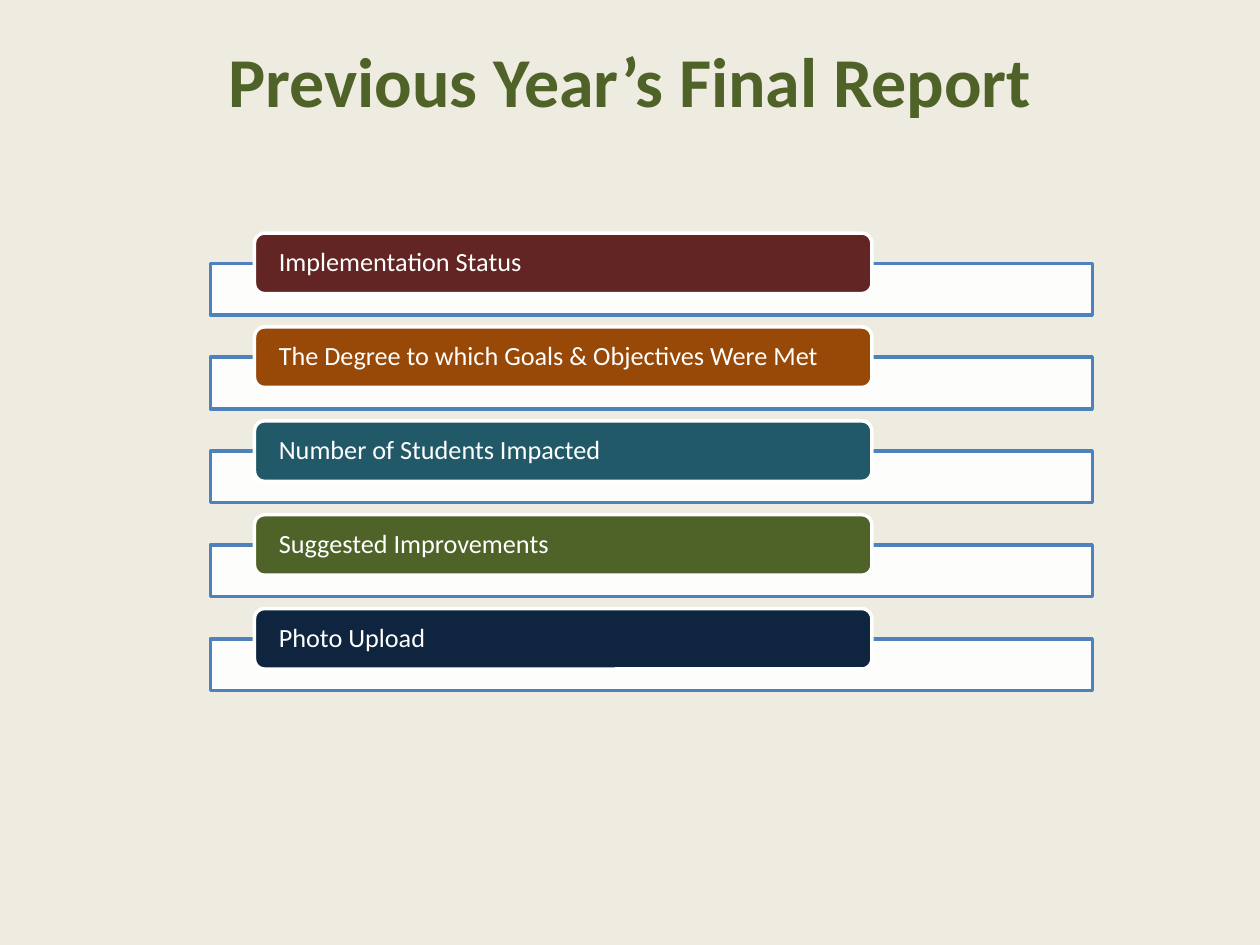
from lxml import etree
from pptx import Presentation
from pptx.dml.color import RGBColor
from pptx.enum.shapes import MSO_SHAPE
from pptx.enum.text import MSO_ANCHOR, PP_ALIGN
from pptx.oxml.ns import qn
from pptx.util import Inches, Pt

RECT, ROUND_RECT = MSO_SHAPE.RECTANGLE, MSO_SHAPE.ROUNDED_RECTANGLE
MIDDLE = MSO_ANCHOR.MIDDLE
LEFT, CENTER = PP_ALIGN.LEFT, PP_ALIGN.CENTER

CREAM = RGBColor(0xEE, 0xEC, 0xE1)
WHITE = RGBColor(0xFF, 0xFF, 0xFF)
BLUE = RGBColor(0x4F, 0x81, 0xBD)
MAROON = RGBColor(0x63, 0x25, 0x23)
ORANGE = RGBColor(0x98, 0x48, 0x07)
TEAL = RGBColor(0x21, 0x59, 0x68)
GREEN = RGBColor(0x4F, 0x62, 0x28)
NAVY = RGBColor(0x0F, 0x24, 0x3E)

TOPICS = [
    ("Implementation Status", MAROON),
    ("The Degree to which Goals & Objectives Were Met", ORANGE),
    ("Number of Students Impacted", TEAL),
    ("Suggested Improvements", GREEN),
    ("Photo Upload", NAVY),
]
FIRST_TOP, LAST_TOP = 1.85, 4.83
PITCH = (LAST_TOP - FIRST_TOP) / (len(TOPICS) - 1)


class SlideBuilder:
    font = "Calibri"
    line_width = Pt(2)

    def __init__(self, slide):
        self.slide = slide

    def background(self, color):
        fill = self.slide.background.fill
        fill.solid()
        fill.fore_color.rgb = color

    def set_text(self, tf, text, size, color, align, bold=False):
        tf.text = text
        tf.word_wrap = True
        tf.vertical_anchor = MIDDLE
        p = tf.paragraphs[0]
        p.alignment = align
        font = p.runs[0].font
        font.name, font.size, font.bold = self.font, Pt(size), bold
        font.color.rgb = color
        return p

    def title(self, text, left, top, width, height):
        sp = self.slide.shapes.title
        sp.left, sp.top = Inches(left), Inches(top)
        sp.width, sp.height = Inches(width), Inches(height)
        self.set_text(sp.text_frame, text, 40, GREEN, CENTER, bold=True)

    def box(self, kind, left, top, width, height, fill, line):
        sp = self.slide.shapes.add_shape(
            kind, Inches(left), Inches(top), Inches(width), Inches(height))
        sp.shadow.inherit = False
        sp.fill.solid()
        sp.fill.fore_color.rgb = fill
        sp.line.color.rgb = line
        sp.line.width = self.line_width
        return sp

    def panel(self, left, top, width, height):
        sp = self.box(RECT, left, top, width, height, WHITE, BLUE)
        # 90 % opaque fill
        color = sp.element.spPr.find(qn("a:solidFill"))[0]
        etree.SubElement(color, qn("a:alpha"), val="90000")

    def label(self, text, left, top, width, height, fill):
        sp = self.box(ROUND_RECT, left, top, width, height, fill, WHITE)
        tf = sp.text_frame
        tf.margin_left = tf.margin_right = Inches(0.17)
        tf.margin_top = tf.margin_bottom = 0
        p = self.set_text(tf, text, 15, WHITE, LEFT)
        p.line_spacing = 0.9


def main():
    prs = Presentation()
    prs.slide_width, prs.slide_height = Inches(10), Inches(7.5)
    s = SlideBuilder(prs.slides.add_slide(prs.slide_layouts[5]))
    s.background(CREAM)

    # Topic list: a label overlapping the top of each panel
    for i, (text, color) in enumerate(TOPICS):
        top = FIRST_TOP + i * PITCH
        s.panel(1.67, top + 0.24, 7, 0.41)
        s.label(text, 2.02, top, 4.9, 0.48, color)

    # Heading
    s.title("Previous Year’s Final Report", 0, 0.25, 10, 0.77)

    prs.save("out.pptx")


if __name__ == "__main__":
    main()
